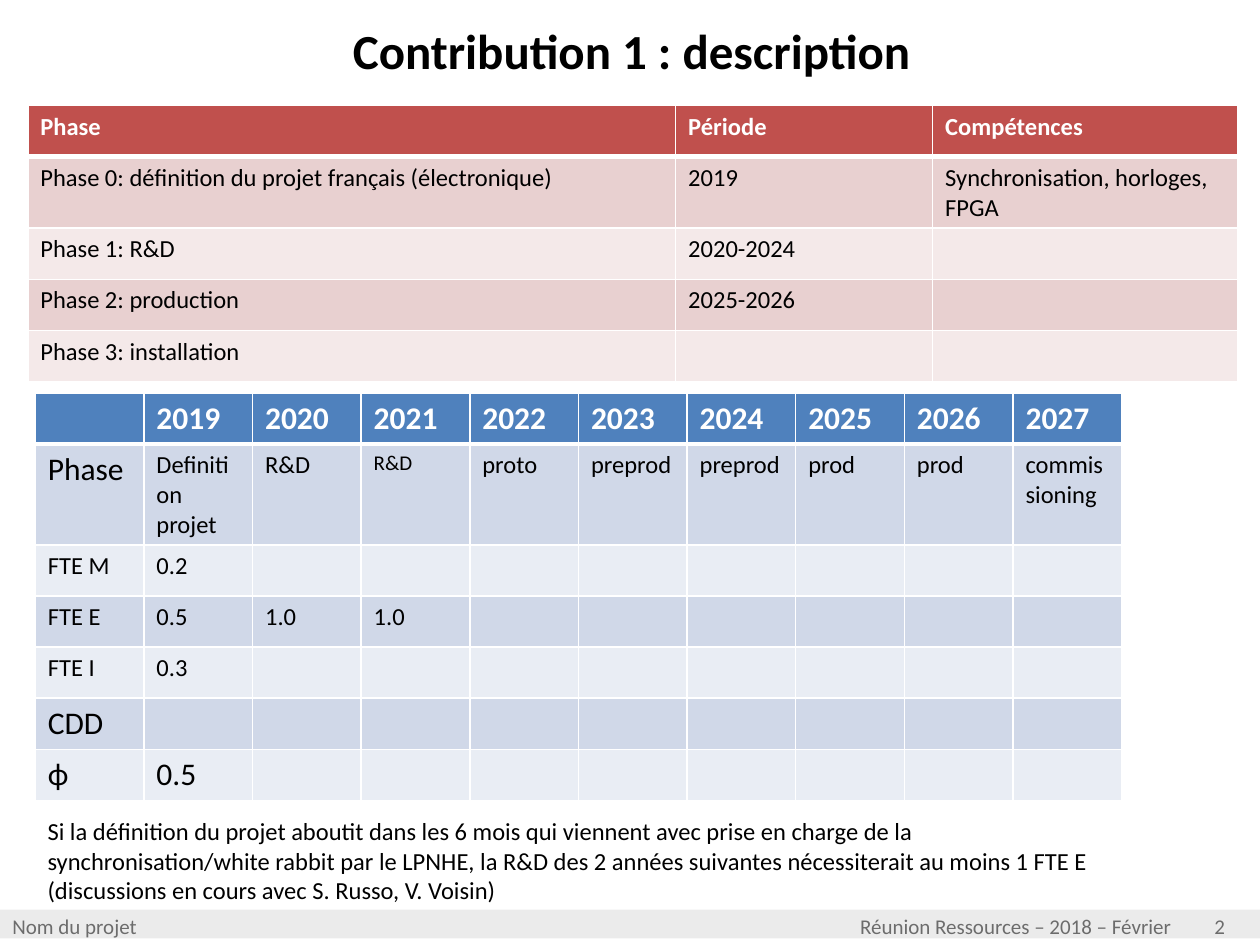
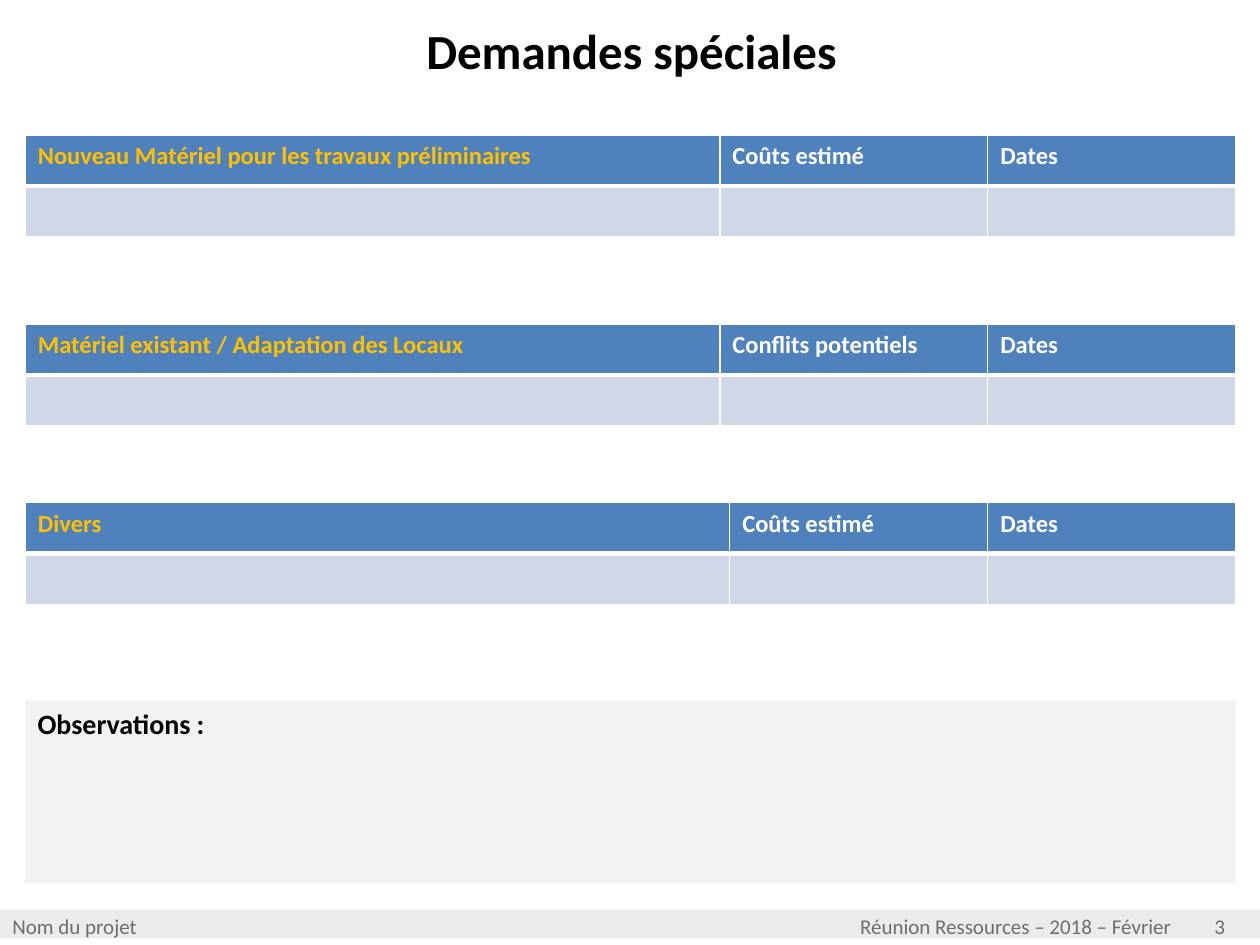
from lxml.etree import SubElement
from pptx import Presentation
from pptx.dml.color import RGBColor
from pptx.enum.shapes import MSO_SHAPE
from pptx.enum.text import MSO_ANCHOR, PP_ALIGN
from pptx.oxml.ns import qn
from pptx.util import Cm, Pt

FONT = "Calibri"
COLOURS = {
    "text": "000000", "white": "FFFFFF", "topic": "FFC000",
    "band": "D9D9D9", "observations": "F2F2F2",
}
# Header, odd row and even row fills of each table theme
THEMES = {
    "red": ("C0504D", "E8D0D0", "F4E9E9"),
    "blue": ("4F81BD", "D0D8E8", "E9EDF4"),
}
ROW_HEIGHT = 1.03
EVENT = "Réunion Ressources – 2018 – Février"
PROJECT = "Nom du projet"

# Cells hold a text, or a text with its own size
PHASES = [
    ["Phase", "Période", "Compétences"],
    ["Phase 0: définition du projet français (électronique)", "2019",
     "Synchronisation, horloges, FPGA"],
    ["Phase 1: R&D", "2020-2024"],
    ["Phase 2: production", "2025-2026"],
    ["Phase 3: installation"],
]
STAFFING = [
    [""] + [(str(year), 18) for year in range(2019, 2028)],
    [("Phase", 18), "Definition projet", "R&D", ("R&D", 12), "proto", "preprod",
     "preprod", "prod", "prod", "commissioning"],
    ["FTE M", "0.2"],
    ["FTE E", "0.5", "1.0", "1.0"],
    ["FTE I", "0.3"],
    [("CDD", 18)],
    [("ϕ", 18), ("0.5", 18)],
]
STAFFING_NOTE = (
    "Si la définition du projet aboutit dans les 6 mois qui viennent avec prise en "
    "charge de la synchronisation/white rabbit par le LPNHE, la R&D des 2 années "
    "suivantes nécessiterait au moins 1 FTE E (discussions en cours avec S. Russo, "
    "V. Voisin)"
)
# Top, column widths and header of each request table
REQUESTS = [
    (2.72, (14, 5.4, 5),
     ["Nouveau Matériel pour les travaux préliminaires", "Coûts estimé", "Dates"]),
    (6.53, (14, 5.4, 5),
     ["Matériel existant / Adaptation des Locaux", "Conflits potentiels", "Dates"]),
    (10.13, (14.2, 5.2, 5), ["Divers", "Coûts estimé", "Dates"]),
]


def rgb(name):
    return RGBColor.from_string(COLOURS.get(name, name))


def write(frame, text, size, colour="text", bold=False, align=PP_ALIGN.LEFT):
    paragraph = frame.paragraphs[0]
    paragraph.alignment = align
    run = paragraph.add_run()
    run.text = text
    run.font.name = FONT
    run.font.size = Pt(size)
    run.font.bold = bold
    run.font.color.rgb = rgb(colour)


def add_text(slide, box, text, size, wrap=True, anchor=MSO_ANCHOR.TOP, **style):
    frame = slide.shapes.add_textbox(*map(Cm, box)).text_frame
    frame.word_wrap = wrap
    frame.vertical_anchor = anchor
    write(frame, text, size, **style)


def add_panel(slide, box, colour):
    panel = slide.shapes.add_shape(MSO_SHAPE.RECTANGLE, *map(Cm, box))
    panel.shadow.inherit = False
    panel.line.fill.background()
    panel.fill.solid()
    panel.fill.fore_color.rgb = rgb(colour)
    return panel


def set_borders(cell, top, bottom):
    properties = cell._tc.get_or_add_tcPr()
    for side, width in (("L", 1), ("R", 1), ("T", top), ("B", bottom)):
        line = SubElement(properties, qn(f"a:ln{side}"), w=str(Pt(width)))
        fill = SubElement(line, qn("a:solidFill"))
        SubElement(fill, qn("a:srgbClr"), val=COLOURS["white"])


def add_grid(slide, left, top, widths, rows, theme, topic_colour="white"):
    """Draw a banded table; short rows are completed with empty cells."""
    header_fill, *band_fills = THEMES[theme]
    table = slide.shapes.add_table(
        len(rows), len(widths), Cm(left), Cm(top),
        Cm(sum(widths)), Cm(ROW_HEIGHT * len(rows))).table
    for column, width in zip(table.columns, widths):
        column.width = Cm(width)
    for r, values in enumerate(rows):
        table.rows[r].height = Cm(ROW_HEIGHT)
        header = r == 0
        for c in range(len(widths)):
            cell = table.cell(r, c)
            # The rule under the header is thicker
            set_borders(cell, 3 if r == 1 else 1, 3 if header else 1)
            cell.fill.solid()
            cell.fill.fore_color.rgb = rgb(
                header_fill if header else band_fills[(r - 1) % 2])
            value = values[c] if c < len(values) else ""
            text, size = value if isinstance(value, tuple) else (value, 14)
            if text:
                colour = "text"
                if header:
                    colour = topic_colour if c == 0 else "white"
                write(cell.text_frame, text, size, colour, bold=header)


def add_page(deck, title, number):
    slide = deck.slides.add_slide(deck.slide_layouts[6])
    # Footer, veiled by a half-transparent band
    for left, width, text in ((17.09, 6.86, EVENT), (24.23, 1.22, str(number)),
                              (0, 3.15, PROJECT)):
        add_text(slide, (left, 18.29, width, 0.76), text, 12, wrap=False)
    band = add_panel(slide, (0, 18.34, 25.4, 0.58), "band")
    tint = band.fill._xPr.find(qn("a:solidFill"))[0]
    SubElement(tint, qn("a:alpha"), val="50000")
    # Title
    add_text(slide, (1.3, 0.13, 22.86, 1.75), title, 28, anchor=MSO_ANCHOR.MIDDLE,
             bold=True, align=PP_ALIGN.CENTER)
    return slide


def add_contribution(deck):
    slide = add_page(deck, "Contribution 1 : description", 2)
    add_grid(slide, 0.56, 2.13, (13.06, 5.18, 6.15), PHASES, "red")
    add_grid(slide, 0.71, 7.92, [2.19] * 10, STAFFING, "blue")
    add_text(slide, (0.71, 16.33, 22.38, 2.06), STAFFING_NOTE, 14)


def add_requests(deck):
    slide = add_page(deck, "Demandes spéciales", 3)
    for top, widths, header in REQUESTS:
        add_grid(slide, 0.51, top, widths, [header, []], "blue", "topic")
    # Observations box
    observations = add_panel(slide, (0.51, 14.12, 24.4, 3.68), "observations")
    observations.text_frame.vertical_anchor = MSO_ANCHOR.TOP
    write(observations.text_frame, "Observations :", 16, bold=True)


def main():
    deck = Presentation()
    deck.slide_width, deck.slide_height = Cm(25.4), Cm(19.05)
    add_contribution(deck)
    add_requests(deck)
    deck.save("out.pptx")


if __name__ == "__main__":
    main()
